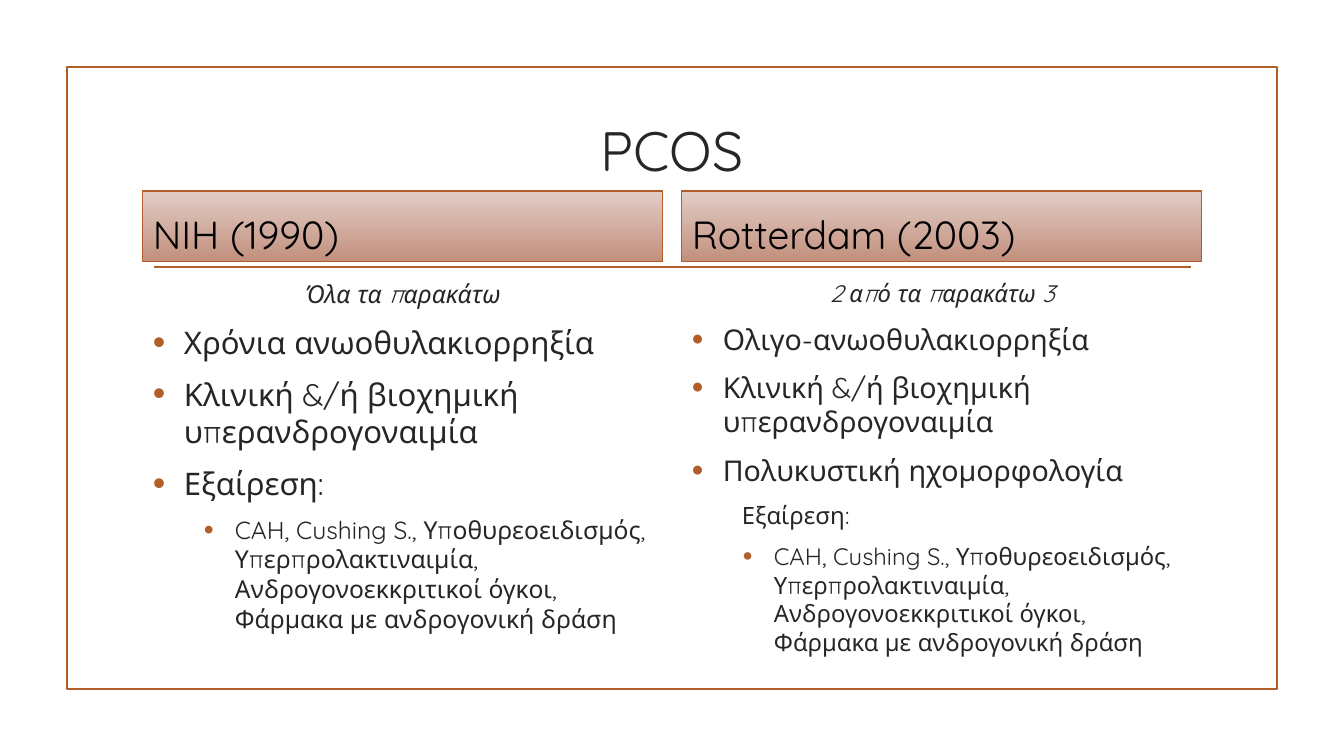
"""Build a slide comparing two sets of PCOS diagnostic criteria."""
from lxml import etree
from pptx import Presentation
from pptx import util as u
from pptx.dml.color import RGBColor
from pptx.enum import shapes, text
from pptx.oxml.ns import qn

SCALE = 914400 / 100.8
FONT = "Quicksand"
ACCENT, INK, BLACK = "B15E28", "262626", "000000"
GRADIENT = ("E2CDC6", "C28F7C")
TITLE = "PCOS"
TITLE_BOX = (143, 108, 1058, 83)
FRAME_BOX = (67, 67, 1210, 622)
RULE = (154, 267, 1191, 267)
LEFT, COLUMN_WIDTH, COLUMN_STEP = 143, 520, 539
HEADER_TOP, HEADER_HEIGHT = 191, 71
BODY_TOP, BODY_HEIGHT = 274, 373

EXCLUSION = "Εξαίρεση:"
HYPERANDROGENISM = "Κλινική &/ή βιοχημική υπερανδρογοναιμία"
EXCLUDED = ("CAH, Cushing S., Υποθυρεοειδισμός, Υπερπρολακτιναιμία, "
            "Ανδρογονοεκκριτικοί όγκοι, Φάρμακα με ανδρογονική δράση")

# style: (level, left margin px, hanging px, bulleted)
STYLES = {
    "lead": (0, 0, 0, False),
    "item": (0, 31, 31, True),
    "subhead": (1, 50, 0, False),
    "subitem": (1, 82, 31, True),
}
COLUMNS = [
    {"header": "NIH (1990)", "item_size": 22.2, "small_size": 17.6,
     "lines": [("lead", "Όλα τα παρακάτω"),
               ("item", "Χρόνια ανωοθυλακιορρηξία"),
               ("item", HYPERANDROGENISM),
               ("item", EXCLUSION),
               ("subitem", EXCLUDED)]},
    {"header": "Rotterdam (2003)", "item_size": 20.4, "small_size": 17,
     "lines": [("lead", "2 από τα παρακάτω 3"),
               ("item", "Ολιγο-ανωοθυλακιορρηξία"),
               ("item", HYPERANDROGENISM),
               ("item", "Πολυκυστική ηχομορφολογία"),
               ("subhead", EXCLUSION),
               ("subitem", EXCLUDED)]},
]


def px(*lengths):
    return [u.Emu(round(length * SCALE)) for length in lengths]


def color(value):
    return RGBColor.from_string(value)


def style_font(paragraph, size, ink, italic=False):
    for run in paragraph.runs:
        run.font.name = FONT
        run.font.size = u.Pt(size)
        run.font.color.rgb = color(ink)
        run.font.italic = italic


def set_line(shape, width):
    shape.line.color.rgb = color(ACCENT)
    shape.line.width = u.Pt(width)


def add_rectangle(slide, box, line_width):
    shape = slide.shapes.add_shape(shapes.MSO_SHAPE.RECTANGLE, *px(*box))
    shape.shadow.inherit = False
    set_line(shape, line_width)
    return shape


def add_title(slide):
    title = slide.shapes.title
    title.left, title.top, title.width, title.height = px(*TITLE_BOX)
    title.text_frame.text = TITLE
    title.text_frame.vertical_anchor = text.MSO_ANCHOR.MIDDLE
    paragraph = title.text_frame.paragraphs[0]
    paragraph.alignment = text.PP_ALIGN.CENTER
    style_font(paragraph, 39.6, INK)


def add_rule(slide):
    rule = slide.shapes.add_connector(shapes.MSO_CONNECTOR.STRAIGHT, *px(*RULE))
    set_line(rule, 1.25)
    etree.SubElement(rule._element.spPr, qn("a:effectLst"))


def add_header(slide, left, caption):
    header = add_rectangle(slide, (left, HEADER_TOP, COLUMN_WIDTH, HEADER_HEIGHT), 0.75)
    header.fill.gradient()
    header.fill.gradient_angle = 270
    for stop, value in zip(header.fill.gradient_stops, GRADIENT):
        stop.color.rgb = color(value)
    frame = header.text_frame
    frame.text = caption
    frame.word_wrap = True
    frame.vertical_anchor = text.MSO_ANCHOR.BOTTOM
    paragraph = frame.paragraphs[0]
    paragraph.alignment = text.PP_ALIGN.LEFT
    paragraph.space_after = u.Pt(6)
    style_font(paragraph, 28, BLACK)


def set_indent(paragraph, margin, hanging, bulleted):
    properties = paragraph._p.get_or_add_pPr()
    margin, hanging = px(margin, hanging)
    properties.set("marL", str(margin))
    properties.set("indent", str(-hanging))
    if bulleted:
        bullet_color = etree.SubElement(properties, qn("a:buClr"))
        etree.SubElement(bullet_color, qn("a:srgbClr"), val=ACCENT)
        etree.SubElement(properties, qn("a:buSzPct"), val="115000")
        etree.SubElement(properties, qn("a:buFont"), typeface="Arial")
        etree.SubElement(properties, qn("a:buChar"), char="•")
    else:
        etree.SubElement(properties, qn("a:buNone"))


def add_body(slide, left, column):
    box = slide.shapes.add_textbox(*px(left, BODY_TOP, COLUMN_WIDTH, BODY_HEIGHT))
    frame = box.text_frame
    frame.word_wrap = True
    for index, (style, line) in enumerate(column["lines"]):
        paragraph = frame.add_paragraph() if index else frame.paragraphs[0]
        level, margin, hanging, bulleted = STYLES[style]
        size = column["item_size" if style == "item" else "small_size"]
        lead = style == "lead"
        paragraph.text = line
        paragraph.level = level
        set_indent(paragraph, margin, hanging, bulleted)
        paragraph.alignment = text.PP_ALIGN.CENTER if lead else text.PP_ALIGN.LEFT
        paragraph.space_before = u.Pt(round(size * 0.2, 1) if index else 0)
        paragraph.space_after = u.Pt(6)
        style_font(paragraph, size, INK, italic=lead)


def main():
    presentation = Presentation()
    presentation.slide_width, presentation.slide_height = px(1344, 756)
    slide = presentation.slides.add_slide(presentation.slide_layouts[5])
    add_rectangle(slide, FRAME_BOX, 1.25).fill.background()
    add_rule(slide)
    add_title(slide)
    for index, column in enumerate(COLUMNS):
        left = LEFT + index * COLUMN_STEP
        add_header(slide, left, column["header"])
        add_body(slide, left, column)
    presentation.save("out.pptx")


if __name__ == "__main__":
    main()
